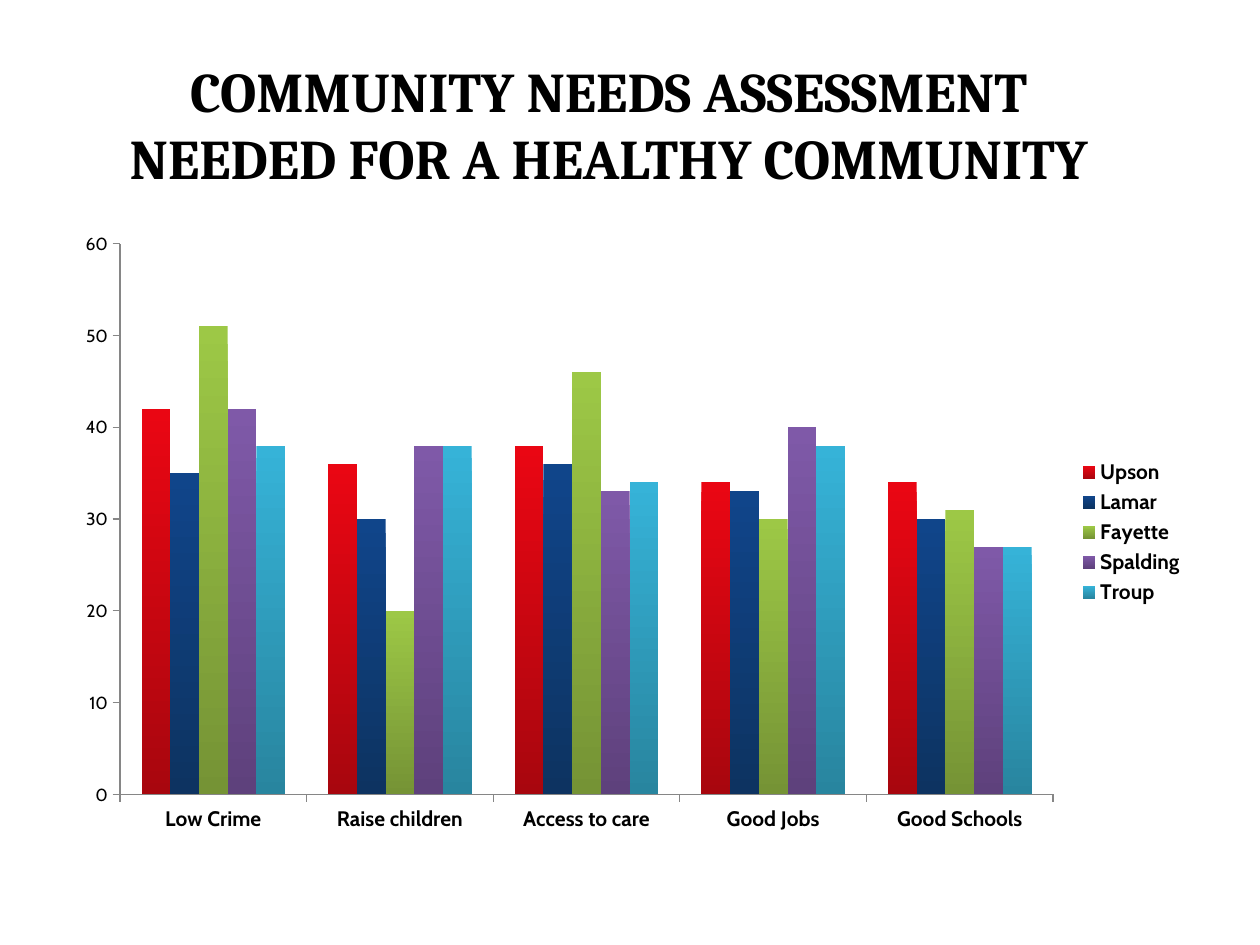
from pptx import Presentation
from pptx.chart.data import CategoryChartData
from pptx.dml.color import RGBColor
from pptx.enum import chart as ch, text
from pptx.util import Cm, Pt


def tint(color, code):
    color.rgb = RGBColor.from_string(code)


def style(font, name, size, bold):
    font.name, font.size, font.bold = name, Pt(size), bold
    tint(font.color, "000000")


deck = Presentation()
deck.slide_width, deck.slide_height = Cm(25.4), Cm(19.05)
slide = deck.slides.add_slide(deck.slide_layouts[5])

title = slide.shapes.title
title.left, title.top, title.width, title.height = Cm(0.43), Cm(1.27), Cm(23.7), Cm(2.44)
frame = title.text_frame
frame.text = "COMMUNITY NEEDS ASSESSMENT\vNEEDED FOR A HEALTHY COMMUNITY"
frame.word_wrap = True
frame.auto_size = text.MSO_AUTO_SIZE.NONE
frame.vertical_anchor = text.MSO_ANCHOR.MIDDLE
line = frame.paragraphs[0]
line.alignment = text.PP_ALIGN.CENTER
for run in line.runs:
    style(run.font, "Cambria", 32, True)

counties = [
    ("Upson", (42, 36, 38, 34, 34), "EA0613", "A8060E"),
    ("Lamar", (35, 30, 36, 33, 30), "10458A", "0D3361"),
    ("Fayette", (51, 20, 46, 30, 31), "9DC846", "759335"),
    ("Spalding", (42, 38, 33, 40, 27), "7F59A8", "5E417C"),
    ("Troup", (38, 38, 34, 38, 27), "36B3D8", "28859F"),
]
data = CategoryChartData()
data.categories = ["Low Crime", "Raise children", "Access to care", "Good Jobs", "Good Schools"]
for name, scores, top, base in counties:
    data.add_series(name, scores)

chart = slide.shapes.add_chart(
    ch.XL_CHART_TYPE.COLUMN_CLUSTERED, Cm(1.27), Cm(4.45), Cm(22.86), Cm(12.57), data
).chart
style(chart.font, "Cabin", 10, False)
chart.has_title = False
chart.has_legend = True
chart.legend.position = ch.XL_LEGEND_POSITION.RIGHT
chart.legend.include_in_layout = False
style(chart.legend.font, "Cabin", 12, True)

plot = chart.plots[0]
plot.gap_width, plot.overlap = 150, 0
plot.vary_by_categories = False
for bars, (name, scores, top, base) in zip(plot.series, counties):
    fill = bars.format.fill
    fill.gradient()
    fill.gradient_angle = 270
    for stop, code, spot in zip(fill.gradient_stops, (top, base), (0, 1)):
        tint(stop.color, code)
        stop.position = spot

for axis in (chart.category_axis, chart.value_axis):
    axis.has_major_gridlines = False
    axis.major_tick_mark = ch.XL_TICK_MARK.OUTSIDE
    axis.minor_tick_mark = ch.XL_TICK_MARK.NONE
    axis.format.line.width = Pt(0.75)
    tint(axis.format.line.color, "868686")
style(chart.category_axis.tick_labels.font, "Cabin", 12, True)
scale = chart.value_axis
scale.minimum_scale, scale.maximum_scale, scale.major_unit = 0, 60, 10

deck.save("out.pptx")
